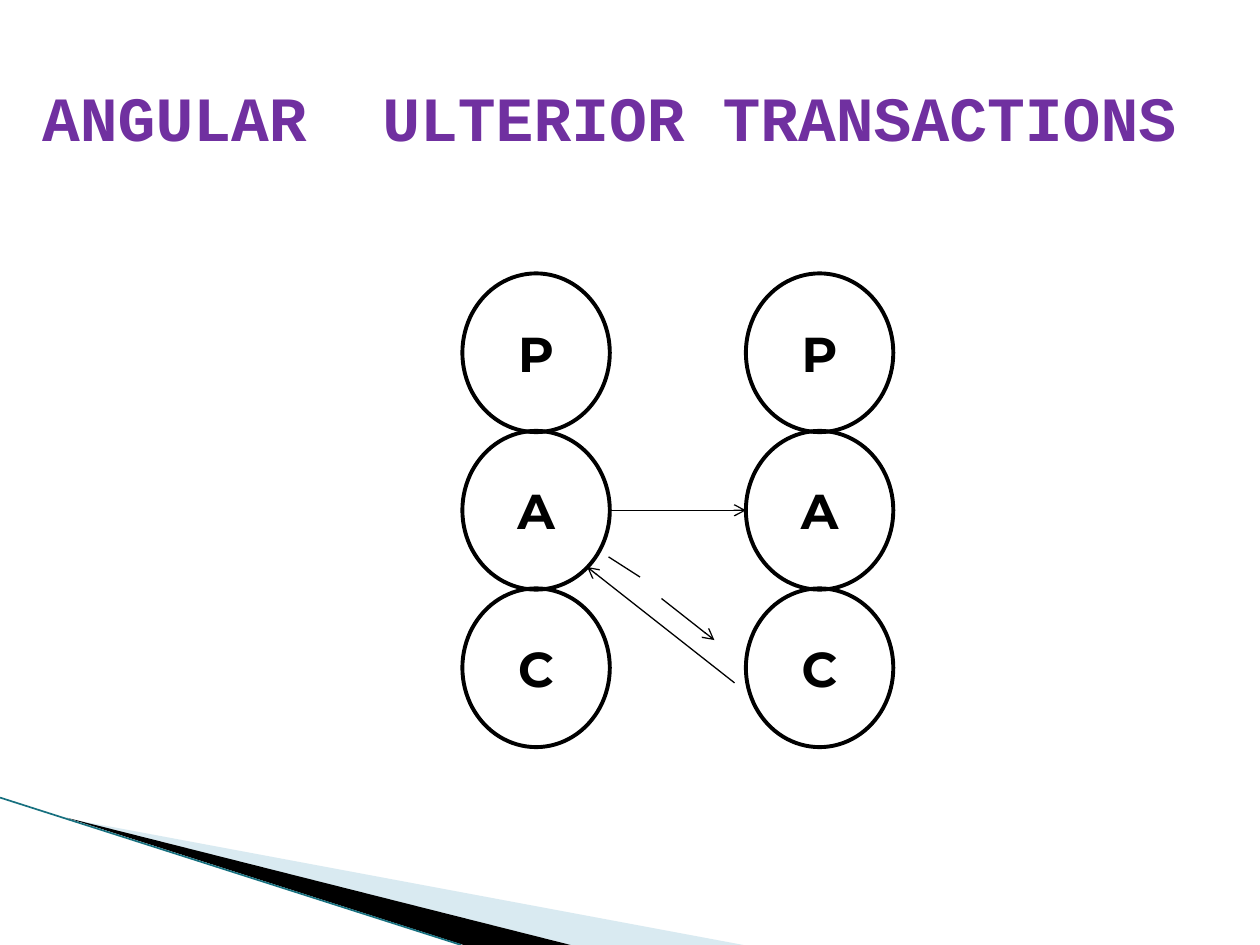
from lxml import etree
from pptx import Presentation
from pptx.dml.color import RGBColor
from pptx.enum import shapes, text
from pptx.oxml.ns import qn
from pptx.util import Inches, Pt

COLORS = {
    "title": "7030A0",
    "ink": "000000",
    "pale": "A0CBDC",
    "edge": "17707F",
}
EGO_STATES = "PAC"
PERSON_LEFTS = (3.67, 5.92)
FIRST_TOP, STATE_STEP = 2.17, 1.25
STATE_WIDTH, STATE_HEIGHT = 1.17, 1.26


def rgb(name):
    return RGBColor.from_string(COLORS[name])


def style_run(paragraph, font_name, size, color):
    paragraph.alignment = text.PP_ALIGN.CENTER
    font = paragraph.runs[0].font
    font.name, font.size, font.bold = font_name, Pt(size), True
    font.color.rgb = rgb(color)


def set_title(slide, wording):
    title = slide.shapes.title
    title.left, title.top = Inches(0.17), Inches(0.3)
    title.width, title.height = Inches(9.33), Inches(1.25)
    frame = title.text_frame
    frame.text = wording
    frame.vertical_anchor = text.MSO_ANCHOR.MIDDLE
    style_run(frame.paragraphs[0], "Courier New", 36, "title")


def add_wedge(slide, points, color, opacity=None):
    """Draw a filled corner wedge; opacity is a percentage."""
    corners = [(Inches(x), Inches(y)) for x, y in points]
    builder = slide.shapes.build_freeform(*corners[0], scale=1.0)
    builder.add_line_segments(corners[1:], close=True)
    wedge = builder.convert_to_shape()
    wedge.shadow.inherit = False
    wedge.fill.solid()
    wedge.fill.fore_color.rgb = rgb(color)
    wedge.line.fill.background()
    if opacity is not None:
        fill_color = wedge.fill._xPr.find(qn("a:solidFill"))[0]
        etree.SubElement(fill_color, qn("a:alpha"), val=str(opacity * 1000))


def add_line(slide, start, end, color="ink", width=0.75, arrow=False):
    line = slide.shapes.add_connector(
        shapes.MSO_CONNECTOR.STRAIGHT, *map(Inches, start + end))
    line.line.color.rgb = rgb(color)
    line.line.width = Pt(width)
    if arrow:
        etree.SubElement(line.line._get_or_add_ln(), qn("a:tailEnd"), type="arrow")
    etree.SubElement(line._element.spPr, qn("a:effectLst"))


def add_ego_state(slide, letter, left, top):
    circle = slide.shapes.add_shape(
        shapes.MSO_SHAPE.OVAL, Inches(left), Inches(top),
        Inches(STATE_WIDTH), Inches(STATE_HEIGHT))
    circle.shadow.inherit = False
    circle.fill.background()
    circle.line.color.rgb = rgb("ink")
    circle.line.width = Pt(2.25)
    frame = circle.text_frame
    frame.text = letter
    frame.word_wrap = False
    frame.vertical_anchor = text.MSO_ANCHOR.MIDDLE
    style_run(frame.paragraphs[0], "Montserrat", 28, "ink")


def add_corner(slide):
    add_wedge(slide, [(0.55, 6.5), (5.9, 7.5), (4.53, 7.5)], "pale", opacity=40)
    add_wedge(slide, [(0.53, 6.49), (4.53, 7.5), (3.68, 7.5)], "ink")
    add_line(slide, (0, 6.33), (3.66, 7.5), "edge", 0.95)


def add_transactions(slide):
    add_line(slide, (4.83, 4.05), (5.92, 4.05), arrow=True)
    add_line(slide, (5.83, 5.42), (4.66, 4.5), arrow=True)
    add_line(slide, (4.83, 4.42), (5.08, 4.58))
    add_line(slide, (5.25, 4.75), (5.67, 5.08), arrow=True)


def main():
    deck = Presentation()
    deck.slide_width, deck.slide_height = Inches(10), Inches(7.5)
    slide = deck.slides.add_slide(deck.slide_layouts[5])
    add_corner(slide)
    set_title(slide, "ANGULAR  ULTERIOR TRANSACTIONS")
    for left in PERSON_LEFTS:
        for row, letter in enumerate(EGO_STATES):
            add_ego_state(slide, letter, left, FIRST_TOP + row * STATE_STEP)
    add_transactions(slide)
    deck.save("out.pptx")


if __name__ == "__main__":
    main()
